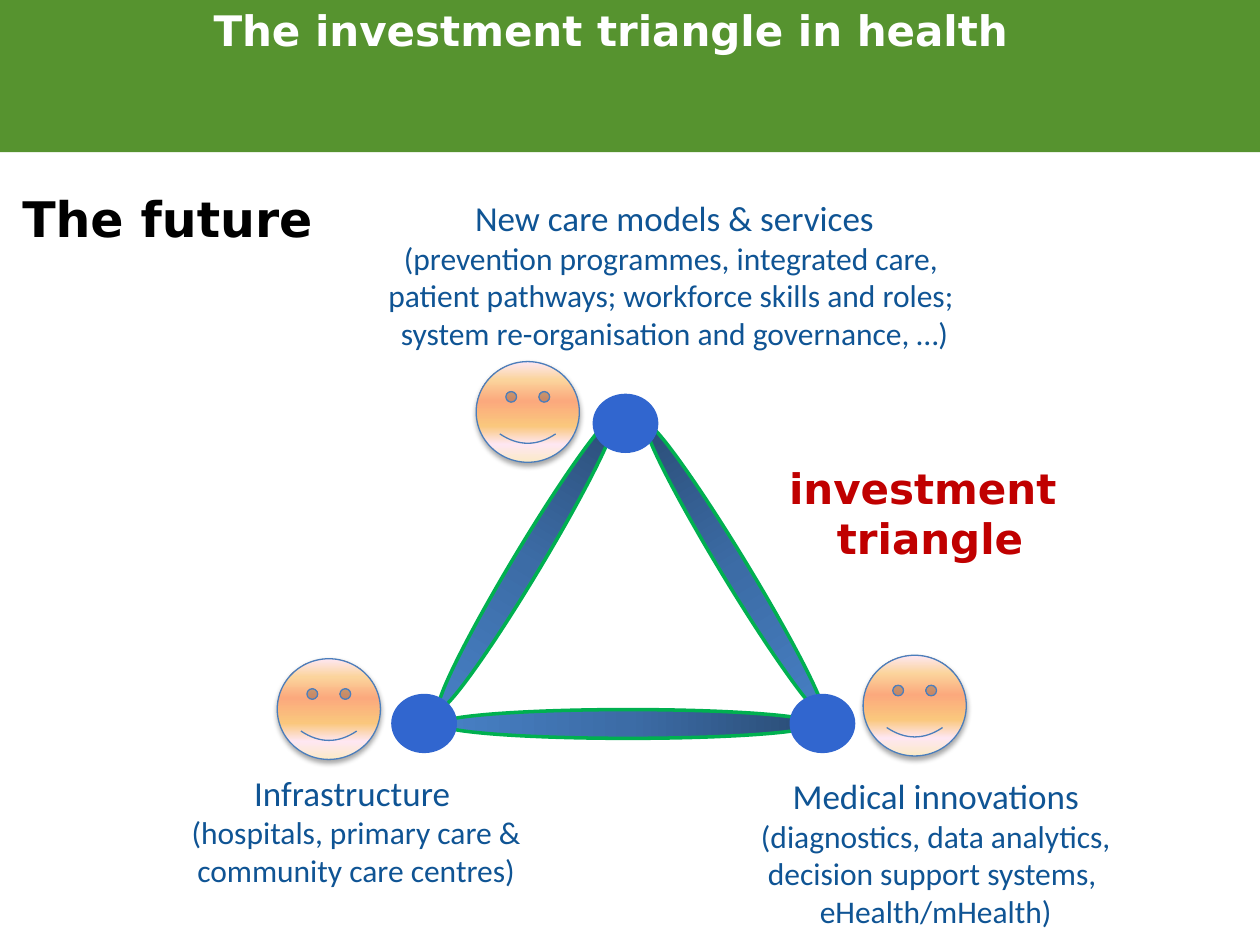
from lxml.etree import SubElement
from pptx import Presentation
from pptx.dml.color import RGBColor
from pptx.enum.shapes import MSO_SHAPE as Kind
from pptx.enum.text import MSO_ANCHOR as Anchor, MSO_AUTO_SIZE as Auto, PP_ALIGN as Align
from pptx.oxml.ns import qn
from pptx.util import Cm, Pt

# Content: box in cm, wrap, alignment, font, bold, colour, lines of (text, size)
HEAD, BODY = "DejaVu Sans", "Calibri"
BLUE = "0F5494"
TITLE = ((0.53, -0.69, 23.57, 2.59), True, Align.CENTER, HEAD, True, "FFFFFF",
         [("The investment triangle in health", 24)])
TEXTS = [
    ((0.2, 3.68, 6.73, 1.45), True, Align.LEFT, HEAD, True, "000000",
     [("The future", 28)]),
    ((3.51, 15.42, 7.34, 2.64), True, Align.CENTER, BODY, False, BLUE,
     [("Infrastructure ", 20),
      ("(hospitals, primary care & community care centres)", 18)]),
    ((15.04, 15.49, 7.65, 3.43), False, Align.CENTER, BODY, False, BLUE,
     [("Medical innovations", 20),
      ("(diagnostics, data analytics,", 18),
      ("decision support systems, ", 18),
      ("eHealth/mHealth)", 18)]),
    ((15.65, 9.19, 6.2, 2.31), False, Align.CENTER, HEAD, True, "C00000",
     [("investment ", 24), ("triangle", 24)]),
    ((6.3, 3.84, 14.6, 3.43), True, Align.CENTER, BODY, False, BLUE,
     [("New care models & services", 20),
      ("(prevention programmes, integrated care, \n"
       "patient pathways; workforce skills and roles; \n"
       "system re-organisation and governance, …)", 18)]),
]

# Triangle parts: places in cm, bars also with their turn in degrees
FACES = [(5.59, 13.28), (9.6, 7.29), (17.4, 13.21)]
BARS = [((12.37, 10.8, 0.58, 7.59), 90),
        ((10.34, 7.92, 0.56, 6.86), 31),
        ((14.55, 8.05, 0.53, 6.86), 328.7)]
DOTS = [(11.96, 7.95), (7.9, 14), (15.93, 14)]
SKIN = [(0, "FBEAC7"), (18, "FEE7F2"), (36, "FAC77D"),
        (61, "FBA97D"), (82, "FBD49C"), (100, "FEE7F2")]
STEEL = [(0, "2A4C75"), (50, "3C6CA6"), (100, "4780C5")]


def rgb(code):
    return RGBColor.from_string(code)


def add_shape(kind, box, fill, line=None, width=0.75):
    shape = slide.shapes.add_shape(kind, *map(Cm, box))
    shape.shadow.inherit = False
    shape.fill.solid()
    shape.fill.fore_color.rgb = rgb(fill)
    if line:
        shape.line.color.rgb = rgb(line)
        shape.line.width = Pt(width)
    else:
        shape.line.fill.background()
    return shape


def add_color(parent, code):
    return SubElement(parent, qn("a:srgbClr"), val=code)


def blend(shape, stops, angle):
    props = shape.element.spPr
    solid = props.find(qn("a:solidFill"))
    grad = SubElement(props, qn("a:gradFill"), rotWithShape="1")
    group = SubElement(grad, qn("a:gsLst"))
    for pos, code in stops:
        add_color(SubElement(group, qn("a:gs"), pos=str(pos * 1000)), code)
    SubElement(grad, qn("a:lin"), ang=str(angle * 60000), scaled="0")
    props.replace(solid, grad)


def add_shade(shape):
    effects = shape.element.spPr.find(qn("a:effectLst"))
    shade = SubElement(effects, qn("a:outerShdw"), blurRad=str(Pt(3.1)),
                       dist=str(Pt(1.8)), dir="5400000", rotWithShape="0")
    SubElement(add_color(shade, "000000"), qn("a:alpha"), val="35000")


def add_text(box, wrap, align, font, bold, color, lines):
    label = slide.shapes.add_textbox(*map(Cm, box))
    frame = label.text_frame
    frame.word_wrap = wrap
    for i, (text, size) in enumerate(lines):
        para = frame.paragraphs[0] if i == 0 else frame.add_paragraph()
        para.text = text
        para.alignment = align
        for run in para.runs:
            run.font.name = font
            run.font.size = Pt(size)
            run.font.bold = bold
            run.font.color.rgb = rgb(color)
    return frame


deck = Presentation()
deck.slide_width, deck.slide_height = Cm(25.4), Cm(19.05)
slide = deck.slides.add_slide(deck.slide_layouts[6])

# Title band
add_shape(Kind.RECTANGLE, (0, -0.08, 25.4, 3.15), "56932F")
add_text(*TITLE).vertical_anchor = Anchor.MIDDLE

# Labels
for item in TEXTS:
    add_text(*item).auto_size = Auto.SHAPE_TO_FIT_TEXT

# Faces
for spot in FACES:
    face = add_shape(Kind.SMILEY_FACE, (*spot, 2.08, 2.03), "FAC77D", "4B7EBC")
    blend(face, SKIN, 270)
    add_shade(face)

# Triangle sides and corners
for box, turn in BARS:
    bar = add_shape(Kind.OVAL, box, "3C6CA6", "00B050", 2)
    bar.rotation = turn
    blend(bar, STEEL, 90)
for spot in DOTS:
    add_shape(Kind.FLOWCHART_CONNECTOR, (*spot, 1.3, 1.17), "3166CF", "3166CF")

deck.save("out.pptx")
